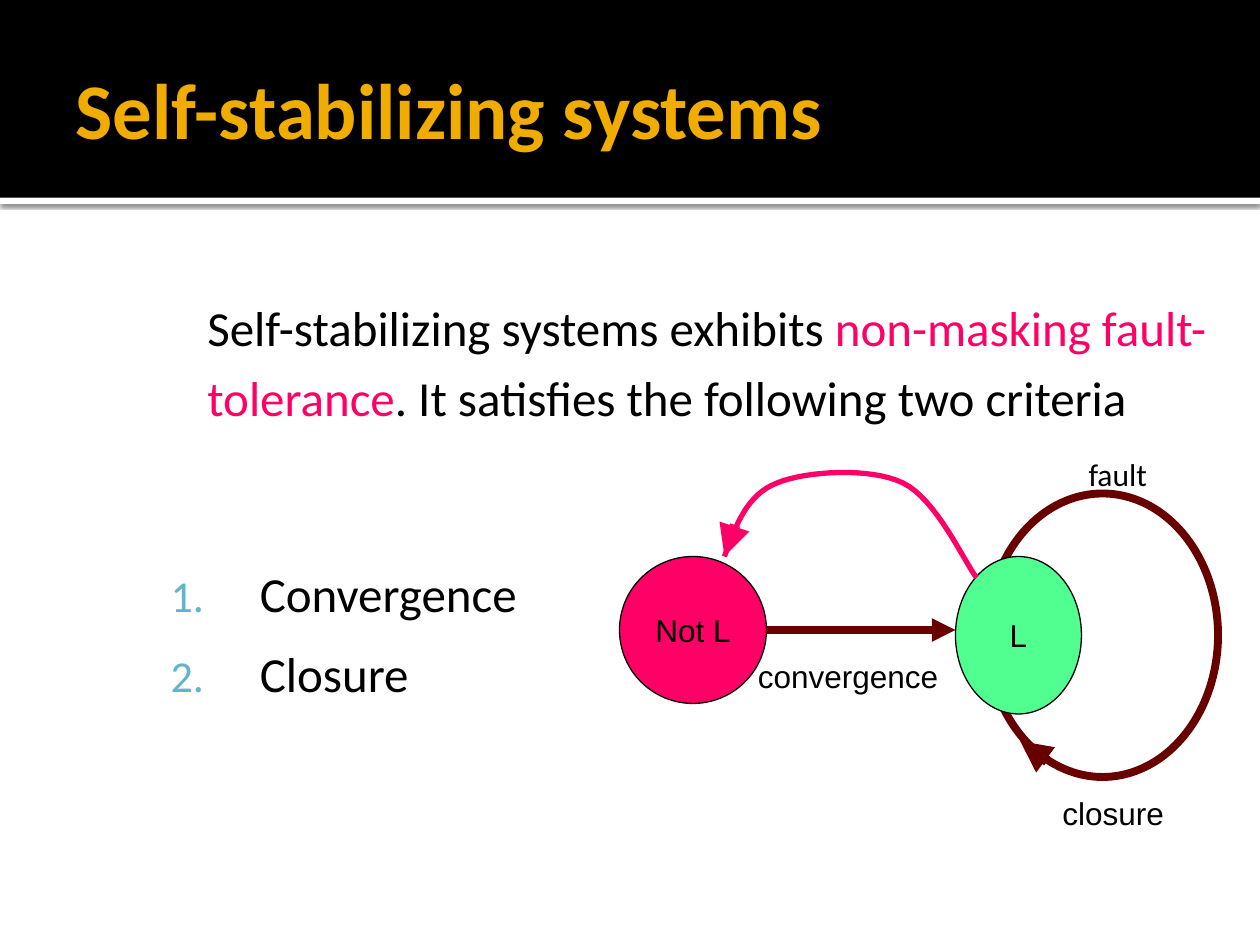
"""Builds the slide on self-stabilizing systems with its state diagram."""

from dataclasses import dataclass
from typing import Optional

from lxml.etree import SubElement
from pptx import Presentation
from pptx.dml.color import RGBColor
from pptx.enum.shapes import MSO_CONNECTOR, MSO_SHAPE
from pptx.enum.text import MSO_ANCHOR, MSO_AUTO_SIZE, PP_ALIGN
from pptx.oxml.ns import qn
from pptx.util import Pt

BLACK = RGBColor(0x00, 0x00, 0x00)
WHITE = RGBColor(0xFF, 0xFF, 0xFF)
AMBER = RGBColor(0xF0, 0xAD, 0x00)
PINK = RGBColor(0xFF, 0x00, 0x66)
GREEN = RGBColor(0x51, 0xFF, 0x91)
MAROON = RGBColor(0x68, 0x00, 0x00)
TEAL = RGBColor(0x60, 0xB5, 0xCC)


@dataclass(frozen=True)
class Area:
    left: float
    top: float
    width: float
    height: float

    def lengths(self):
        return Pt(self.left), Pt(self.top), Pt(self.width), Pt(self.height)


@dataclass(frozen=True)
class State:
    area: Area
    fill: Optional[RGBColor]
    line: RGBColor
    weight: float
    text: str = ""


@dataclass(frozen=True)
class Arrow:
    start: tuple
    end: tuple
    color: RGBColor
    weight: float


@dataclass(frozen=True)
class Label:
    area: Area
    text: str


LOOP = State(Area(564, 282, 132, 162), None, MAROON, 4.5)
STATES = [
    State(Area(354, 318, 84, 84), PINK, BLACK, 0.75, "Not L"),
    LOOP,
    State(Area(546, 318, 72, 90), GREEN, BLACK, 0.75, "L"),
]
ARROWS = [
    Arrow((438, 360), (546, 360), MAROON, 4.5),
    Arrow((598.5, 435), (583, 423.5), MAROON, 6),
    Arrow((420, 300), (414, 318), PINK, 6),
]
LABELS = [
    Label(Area(426, 372, 117.5, 29), "convergence"),
    Label(Area(600, 450, 73, 29), "closure"),
]
FAULT_CURVE = [
    ((414, 318), (420.5, 300), (427, 282.5), (444, 276)),
    ((444, 276), (461, 269), (498, 267), (516, 276)),
    ((516, 276), (535, 285), (551, 321), (558, 330)),
]


def format_font(font, size: float, name: str, color: RGBColor) -> None:
    font.size = Pt(size)
    font.name = name
    font.color.rgb = color


def set_insets(frame, left: float, top: float, right: float, bottom: float) -> None:
    frame.margin_left, frame.margin_top = Pt(left), Pt(top)
    frame.margin_right, frame.margin_bottom = Pt(right), Pt(bottom)


def place(shape, area: Area) -> None:
    shape.left, shape.top, shape.width, shape.height = area.lengths()


def draw_band(page, area: Area, color: RGBColor, order: int):
    band = page.shapes.add_shape(MSO_SHAPE.RECTANGLE, *area.lengths())
    band.shadow.inherit = False
    band.fill.solid()
    band.fill.fore_color.rgb = color
    band.line.fill.background()
    page.shapes._spTree.insert(2 + order, band._element)
    return band


def cast_shadow(shape) -> None:
    effects = shape._element.spPr.find(qn("a:effectLst"))
    shadow = SubElement(effects, qn("a:outerShdw"), blurRad=str(Pt(2.5)),
                        dist=str(Pt(0.8)), dir="5400000", rotWithShape="0")
    color = SubElement(shadow, qn("a:srgbClr"), val=str(BLACK))
    SubElement(color, qn("a:alpha"), val="60000")


def draw_state(page, state: State) -> None:
    oval = page.shapes.add_shape(MSO_SHAPE.OVAL, *state.area.lengths())
    oval.shadow.inherit = False
    if state.fill is None:
        oval.fill.background()
    else:
        oval.fill.solid()
        oval.fill.fore_color.rgb = state.fill
    oval.line.color.rgb = state.line
    oval.line.width = Pt(state.weight)
    if state.text:
        oval.text_frame.word_wrap = False
        para = oval.text_frame.paragraphs[0]
        para.text = state.text
        para.alignment = PP_ALIGN.CENTER
        format_font(para.font, 18, "Arial", BLACK)


def draw_arrow(page, arrow: Arrow) -> None:
    ends = [Pt(value) for value in arrow.start + arrow.end]
    line = page.shapes.add_connector(MSO_CONNECTOR.STRAIGHT, *ends)
    line.line.color.rgb = arrow.color
    line.line.width = Pt(arrow.weight)
    SubElement(line.line._get_or_add_ln(), qn("a:tailEnd"), type="triangle")
    SubElement(line._element.spPr, qn("a:effectLst"))


def bezier_point(points: tuple, t: float) -> tuple:
    weights = ((1 - t) ** 3, 3 * t * (1 - t) ** 2, 3 * t * t * (1 - t), t ** 3)
    return tuple(Pt(sum(w * p[axis] for w, p in zip(weights, points))) for axis in (0, 1))


def draw_curve(page, segments: list, color: RGBColor, weight: float, steps: int = 16) -> None:
    builder = page.shapes.build_freeform(*bezier_point(segments[0], 0))
    vertices = [bezier_point(segment, step / steps)
                for segment in segments for step in range(1, steps + 1)]
    builder.add_line_segments(vertices, close=False)
    curve = builder.convert_to_shape()
    curve.shadow.inherit = False
    curve.fill.background()
    curve.line.color.rgb = color
    curve.line.width = Pt(weight)


def draw_label(page, label: Label) -> None:
    box = page.shapes.add_textbox(*label.area.lengths())
    box.text_frame.word_wrap = False
    para = box.text_frame.paragraphs[0]
    para.text = label.text
    format_font(para.font, 18, "Arial", BLACK)


def add_body_paragraph(para, runs: list, size: float, before: float, margin: float,
                       numbered: bool = False) -> None:
    para.line_spacing = 1.2
    para.space_before = Pt(before)
    props = para._p.get_or_add_pPr()
    props.set("marL", str(Pt(margin)))
    props.set("indent", str(Pt(-51 if numbered else 0)))
    if numbered:
        para.level = 1
        SubElement(SubElement(props, qn("a:buClr")), qn("a:srgbClr"), val=str(TEAL))
        SubElement(props, qn("a:buSzPct"), val="90000")
        SubElement(props, qn("a:buFont"), typeface="+mj-lt")
        SubElement(props, qn("a:buAutoNum"), type="arabicPeriod")
    else:
        SubElement(props, qn("a:buNone"))
    format_font(para.font, size, "Calibri", BLACK)
    for text, color in runs:
        span = para.add_run()
        span.text = text
        if color != BLACK:
            span.font.color.rgb = color


def fill_title(title) -> None:
    place(title, Area(36, 12, 648, 99))
    frame = title.text_frame
    frame.vertical_anchor = MSO_ANCHOR.MIDDLE
    set_insets(frame, 7.2, 3.6, 3.6, 3.6)
    para = frame.paragraphs[0]
    para.text = "Self-stabilizing systems"
    para.alignment = PP_ALIGN.LEFT
    format_font(para.font, 45, "Calibri", AMBER)
    para.font.bold = True


def fill_body(body) -> None:
    place(body, Area(66, 156, 639, 330))
    frame = body.text_frame
    frame.auto_size = MSO_AUTO_SIZE.NONE
    set_insets(frame, 4.5, 7.2, 7.2, 3.6)
    intro = [("Self-stabilizing systems exhibits ", BLACK),
             ("non-masking fault-tolerance", PINK),
             (". It satisfies the following two criteria", BLACK)]
    add_body_paragraph(frame.paragraphs[0], intro, 28, 0, 48)
    add_body_paragraph(frame.add_paragraph(), [("fault", BLACK)], 18, 12, 551.5)
    for text, before in (("Convergence", 33.5), ("Closure", 5.6)):
        add_body_paragraph(frame.add_paragraph(), [(text, BLACK)], 28, before, 78, True)


def main() -> None:
    deck = Presentation()
    deck.slide_width, deck.slide_height = Pt(720), Pt(540)
    page = deck.slides.add_slide(deck.slide_layouts[1])
    cast_shadow(draw_band(page, Area(0, 113, 720, 3.6), WHITE, 0))
    draw_band(page, Area(0, 0, 720, 113), BLACK, 1)
    fill_title(page.shapes.title)
    fill_body(page.placeholders[1])
    for state in STATES:
        draw_state(page, state)
    draw_curve(page, FAULT_CURVE, PINK, 3)
    for arrow in ARROWS:
        draw_arrow(page, arrow)
    for label in LABELS:
        draw_label(page, label)
    deck.save("out.pptx")


if __name__ == "__main__":
    main()
